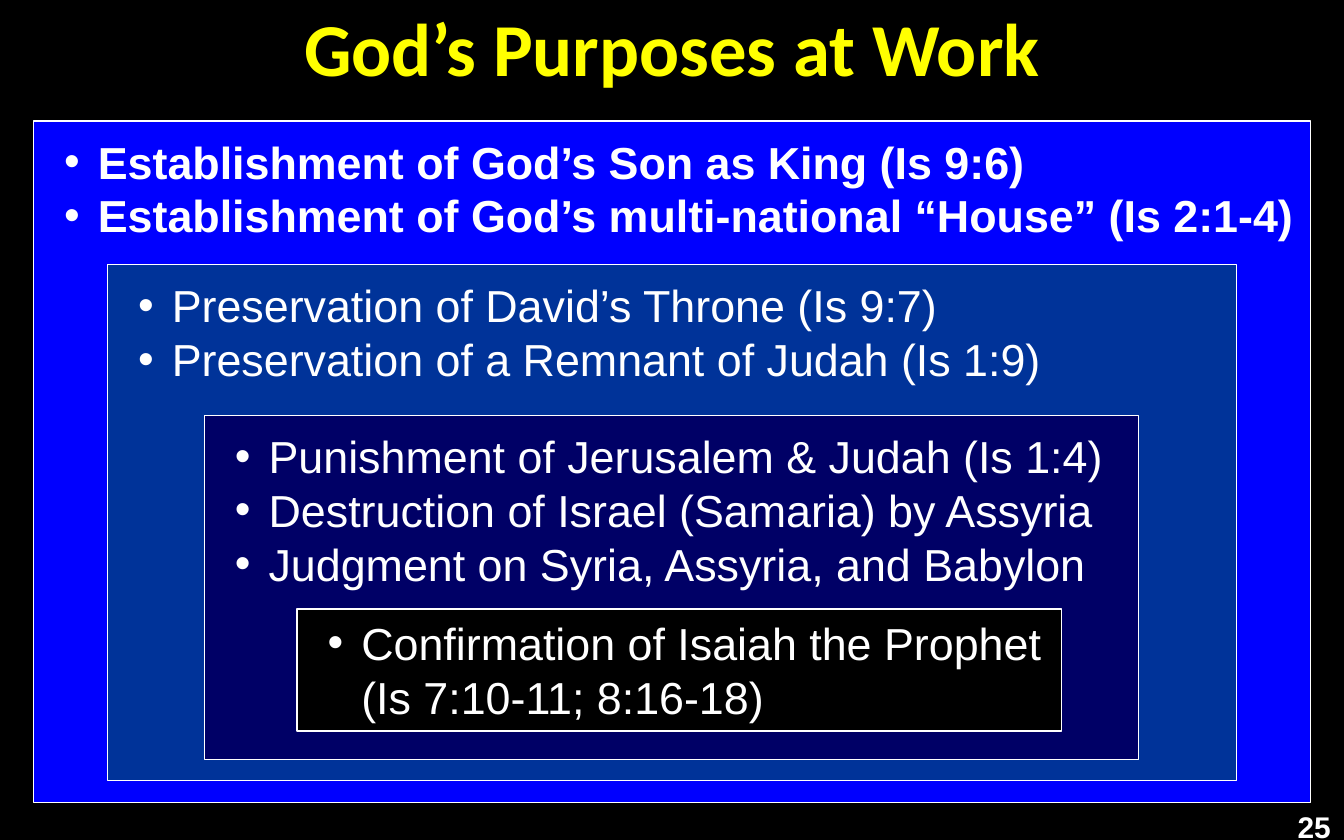
from dataclasses import dataclass

from lxml import etree
from pptx import Presentation
from pptx.dml.color import RGBColor
from pptx.enum.shapes import MSO_SHAPE
from pptx.enum.text import MSO_ANCHOR, PP_ALIGN
from pptx.oxml.ns import qn
from pptx.util import Inches, Pt

RECT = MSO_SHAPE.RECTANGLE
TOP, MIDDLE = MSO_ANCHOR.TOP, MSO_ANCHOR.MIDDLE
LEFT, CENTER, RIGHT = PP_ALIGN.LEFT, PP_ALIGN.CENTER, PP_ALIGN.RIGHT


@dataclass(frozen=True)
class Theme:
    """Colours, fonts and type sizes of the slide."""
    back: str = "000000"
    text: str = "FFFFFF"
    title: str = "FFFF00"
    outer: str = "0000FF"
    middle: str = "003399"
    inner: str = "000066"
    core: str = "000000"
    head_font: str = "Calibri"
    body_font: str = "Arial"
    head_size: int = 40
    body_size: int = 24
    page_size: int = 16


class Deck:
    """Holds the theme and the current slide, and draws its elements."""

    def __init__(self, slide, theme):
        """Keep the slide and theme, and paint the background."""
        self.slide = slide
        self.theme = theme
        self.paint(slide.background.fill, theme.back)

    def paint(self, fill, color):
        """Make a fill solid in one colour."""
        fill.solid()
        fill.fore_color.rgb = RGBColor.from_string(color)

    def typeset(self, frame, lines, font, size, color, bold, align, anchor):
        """Put styled lines into a text frame."""
        frame.word_wrap = True
        frame.vertical_anchor = anchor
        frame.text = "\n".join(lines)
        for para in frame.paragraphs:
            para.alignment = align
            para.font.name = font
            para.font.size = Pt(size)
            para.font.bold = bold
            para.font.color.rgb = RGBColor.from_string(color)

    def label(self, area, text, font, size, color, align, anchor=TOP):
        """Add a bold text box."""
        box = self.slide.shapes.add_textbox(*map(Inches, area))
        self.typeset(box.text_frame, [text], font, size, color, True, align, anchor)

    def bullet(self, para):
        """Give a paragraph a hanging bullet."""
        props = para._p.get_or_add_pPr()
        props.set("marL", str(Inches(0.38)))
        props.set("indent", str(Inches(-0.25)))
        etree.SubElement(props, qn("a:buFont")).set("typeface", self.theme.body_font)
        etree.SubElement(props, qn("a:buChar")).set("char", "•")
        props.append(props.find(qn("a:defRPr")))

    def panel(self, area, color, lines, bold=False, inset=0.1):
        """Add an outlined rectangle with a bulleted list."""
        look = self.theme
        shape = self.slide.shapes.add_shape(RECT, *map(Inches, area))
        shape.shadow.inherit = False
        self.paint(shape.fill, color)
        self.paint(shape.line.fill, look.text)
        shape.line.width = Pt(0.75)
        frame = shape.text_frame
        frame.margin_top = Inches(inset)
        self.typeset(frame, lines, look.body_font, look.body_size, look.text,
                     bold, LEFT, TOP)
        for para in frame.paragraphs:
            self.bullet(para)


def main():
    """Build and save the slide."""
    show = Presentation()
    show.slide_width = Inches(10)
    show.slide_height = Inches(6.25)
    look = Theme()
    deck = Deck(show.slides.add_slide(show.slide_layouts[6]), look)

    deck.panel((0.25, 0.9, 9.5, 5.07), look.outer, [
        "Establishment of God’s Son as King (Is 9:6)",
        "Establishment of God’s multi-national “House” (Is 2:1-4)",
    ], bold=True)
    deck.label((0, -0.02, 10, 0.73), "God’s Purposes at Work", look.head_font,
               look.head_size, look.title, CENTER, MIDDLE)
    deck.label((9.5, 5.97, 0.5, 0.28), "25", look.body_font,
               look.page_size, look.text, RIGHT)
    deck.panel((0.8, 1.97, 8.4, 3.84), look.middle, [
        "Preservation of David’s Throne (Is 9:7)",
        "Preservation of a Remnant of Judah (Is 1:9)",
    ])
    deck.panel((1.52, 3.09, 6.95, 2.56), look.inner, [
        "Punishment of Jerusalem & Judah (Is 1:4)",
        "Destruction of Israel (Samaria) by Assyria",
        "Judgment on Syria, Assyria, and Babylon",
    ])
    deck.panel((2.21, 4.53, 5.69, 0.91), look.core, [
        "Confirmation of Isaiah the Prophet (Is 7:10-11; 8:16-18)",
    ], inset=0.05)
    show.save("out.pptx")


if __name__ == "__main__":
    main()
